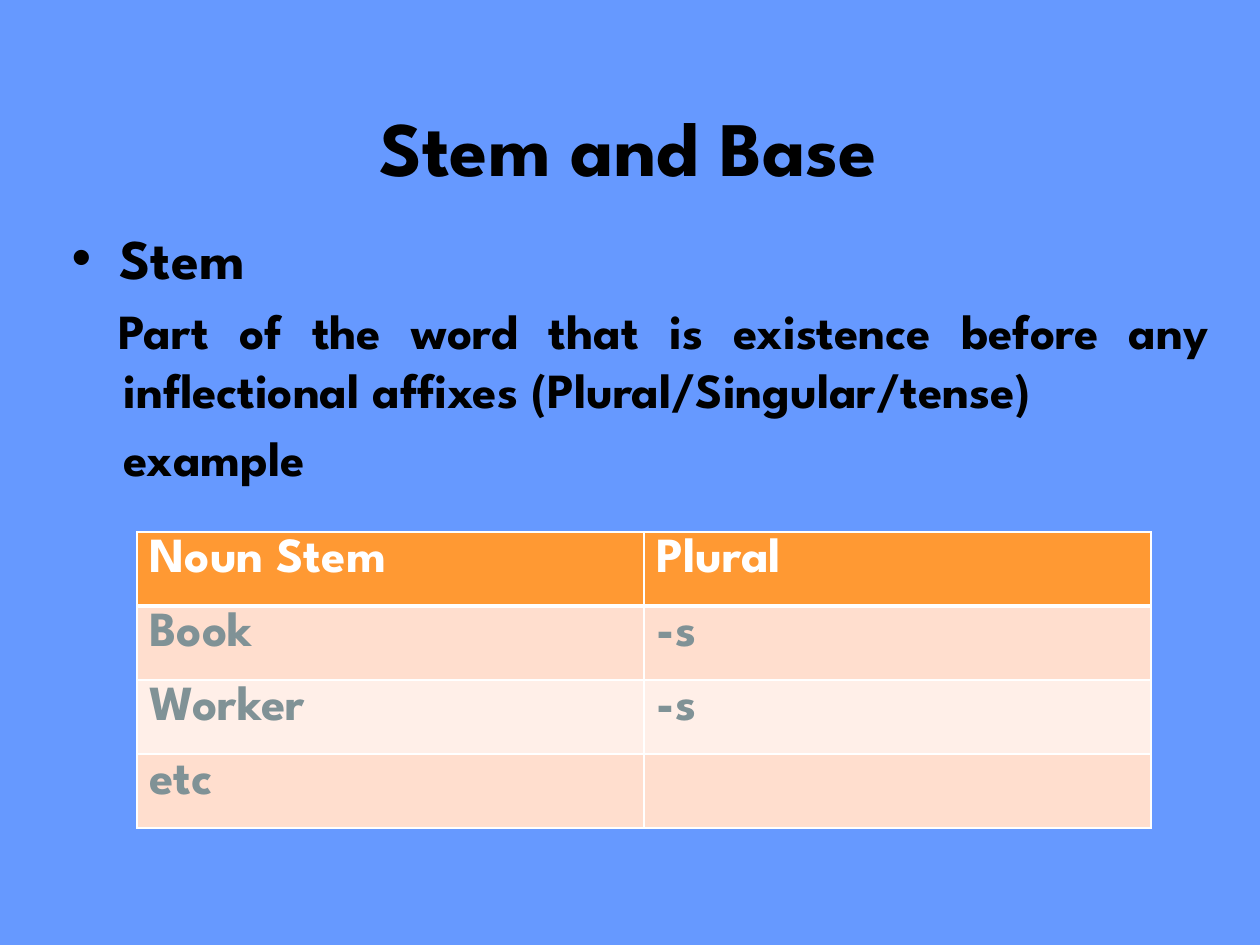
from dataclasses import dataclass

from lxml import etree
from pptx import Presentation
from pptx import util as u
from pptx.dml.color import RGBColor
from pptx.enum import text
from pptx.oxml import ns

TITLE = "Stem and Base"
BODY = [
    ("Stem", "bullet"),
    ("Part of the word that is existence before any inflectional affixes "
     "(Plural/Singular/tense)", "detail"),
    ("example", "plain"),
]
ROWS = [("Noun Stem", "Plural"), ("Book", "-s"), ("Worker", "-s"), ("etc", "")]

TITLE_BOX = (88, 88, 1081, 116)
BODY_BOX = (59, 217, 1162, 650)
TABLE_LEFT, TABLE_TOP, COLUMN_WIDTH, ROW_HEIGHT = 137, 532, 507, 74


@dataclass(frozen=True)
class Theme:
    font: str = "League Spartan"
    background: str = "6699FF"
    ink: str = "000000"
    header: str = "FF9933"
    header_ink: str = "FFFFFF"
    cell_ink: str = "809296"
    bands: tuple = ("FFDECE", "FFEFE8")
    border: str = "FFFFFF"
    title_size: int = 44
    bullet_size: int = 32
    text_size: int = 28


THEME = Theme()
# style: level, left margin px, first-line indent px, size, alignment
STYLES = {
    "bullet": (0, 48, -48, THEME.bullet_size, text.PP_ALIGN.LEFT),
    "detail": (1, 52, -5, THEME.text_size, text.PP_ALIGN.JUSTIFY),
    "plain": (1, 52, 0, THEME.text_size, text.PP_ALIGN.JUSTIFY),
}


def px(length):
    return u.Emu(round(length * 914400 / 126))


def place(shape, box):
    shape.left, shape.top, shape.width, shape.height = map(px, box)


def write(para, words, size=THEME.text_size, color=THEME.ink,
          align=text.PP_ALIGN.LEFT):
    para.alignment = align
    span = para.add_run()
    span.text = words
    font = span.font
    font.name, font.size, font.bold = THEME.font, u.Pt(size), True
    font.color.rgb = RGBColor.from_string(color)


def set_bullet(para, margin, indent, char=None):
    """Set the hanging indent, and a bullet character or none."""
    props = para._p.get_or_add_pPr()
    props.set("marL", str(px(margin)))
    props.set("indent", str(px(indent)))
    if char:
        color = etree.SubElement(props, ns.qn("a:buClr"))
        etree.SubElement(color, ns.qn("a:srgbClr"), val=THEME.ink)
        etree.SubElement(props, ns.qn("a:buChar"), char=char)
    else:
        etree.SubElement(props, ns.qn("a:buNone"))


def set_borders(cell, **widths):
    """Draw the four edges, 1 pt unless a width is given by edge letter."""
    props = cell._tc.get_or_add_tcPr()
    for edge in "LRTB":
        line = etree.SubElement(props, ns.qn(f"a:ln{edge}"),
                                w=str(u.Pt(widths.get(edge, 1))))
        fill = etree.SubElement(line, ns.qn("a:solidFill"))
        etree.SubElement(fill, ns.qn("a:srgbClr"), val=THEME.border)


def add_title(page):
    title = page.shapes.title
    place(title, TITLE_BOX)
    frame = title.text_frame
    frame.auto_size = text.MSO_AUTO_SIZE.NONE
    frame.vertical_anchor = text.MSO_ANCHOR.MIDDLE
    write(frame.paragraphs[0], TITLE, size=THEME.title_size,
          align=text.PP_ALIGN.CENTER)


def add_body(page):
    body = page.placeholders[1]
    place(body, BODY_BOX)
    frame = body.text_frame
    frame.auto_size = text.MSO_AUTO_SIZE.NONE
    for index, (words, style) in enumerate(BODY):
        level, margin, indent, size, align = STYLES[style]
        para = frame.add_paragraph() if index else frame.paragraphs[0]
        para.level = level
        para.space_before = u.Pt(size * 0.2 if index else 0)
        set_bullet(para, margin, indent, "•" if style == "bullet" else None)
        write(para, words, size=size, align=align)


def add_stem_table(page):
    columns = len(ROWS[0])
    table = page.shapes.add_table(
        len(ROWS), columns, px(TABLE_LEFT), px(TABLE_TOP),
        px(COLUMN_WIDTH * columns), px(ROW_HEIGHT * len(ROWS))).table
    for r, row in enumerate(ROWS):
        fill = THEME.bands[(r - 1) % 2] if r else THEME.header
        ink = THEME.cell_ink if r else THEME.header_ink
        edges = {0: {"B": 3}, 1: {"T": 3}}.get(r, {})
        for c, words in enumerate(row):
            cell = table.cell(r, c)
            set_borders(cell, **edges)
            cell.fill.solid()
            cell.fill.fore_color.rgb = RGBColor.from_string(fill)
            if words:
                write(cell.text_frame.paragraphs[0], words, color=ink)


def main():
    deck = Presentation()
    deck.slide_width, deck.slide_height = px(1260), px(945)
    page = deck.slides.add_slide(deck.slide_layouts[1])
    page.background.fill.solid()
    page.background.fill.fore_color.rgb = RGBColor.from_string(THEME.background)
    add_title(page)
    add_body(page)
    add_stem_table(page)
    deck.save("out.pptx")


if __name__ == "__main__":
    main()
